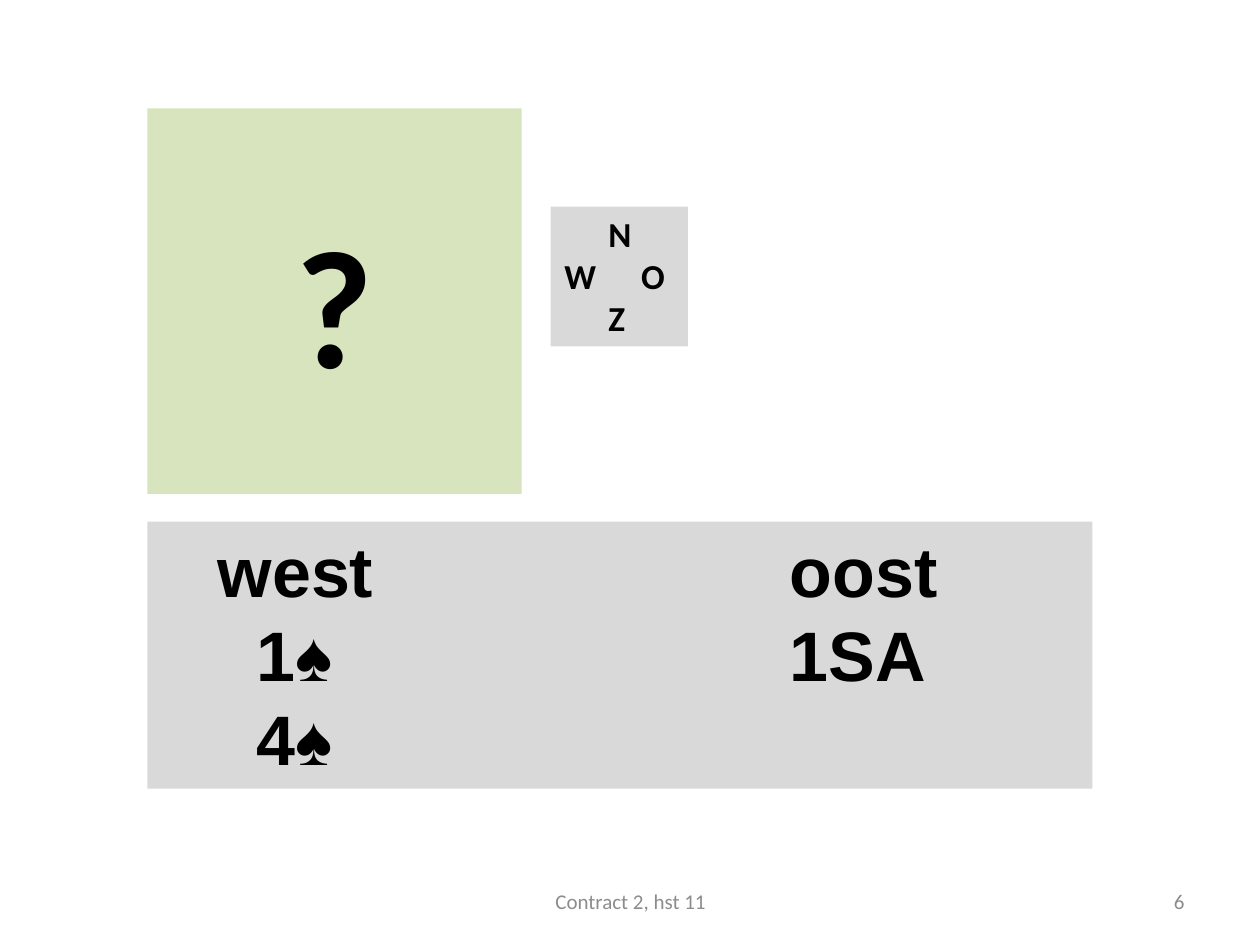
from lxml import etree
from pptx import Presentation
from pptx.dml.color import RGBColor
from pptx.enum.shapes import MSO_SHAPE
from pptx.enum.text import MSO_ANCHOR, PP_ALIGN
from pptx.oxml.ns import qn
from pptx.util import Inches, Pt

RECT = MSO_SHAPE.RECTANGLE
TOP, MIDDLE = MSO_ANCHOR.TOP, MSO_ANCHOR.MIDDLE
LEFT, CENTER, RIGHT = PP_ALIGN.LEFT, PP_ALIGN.CENTER, PP_ALIGN.RIGHT
GREEN, GREY, BLACK, MUTED = "D7E4BD", "D9D9D9", "000000", "8C8C8C"
EDGE = 1.17
FOOT = 6.95


def color(code):
    return RGBColor.from_string(code)


def add_panel(slide, box, fill):
    panel = slide.shapes.add_shape(RECT, *map(Inches, box))
    panel.shadow.inherit = False
    panel.fill.solid()
    panel.fill.fore_color.rgb = color(fill)
    panel.line.fill.background()
    frame = panel.text_frame
    frame.word_wrap = True
    frame.vertical_anchor = TOP
    return frame


def add_run(para, text, size, font="Calibri", ink=BLACK, bold=True):
    run = para.add_run()
    run.text = text
    run.font.size = Pt(size)
    run.font.name = font
    run.font.bold = bold
    run.font.color.rgb = color(ink)


def set_tabs(para, stops):
    tabs = etree.SubElement(para._p.get_or_add_pPr(), qn("a:tabLst"))
    for stop in stops:
        etree.SubElement(tabs, qn("a:tab"), pos=str(Inches(stop)), algn="l")


def add_rows(frame, rows, size, font):
    """Fill a frame with rows of (tab stop, word) pairs."""
    for i, row in enumerate(rows):
        para = frame.add_paragraph() if i else frame.paragraphs[0]
        para.alignment = LEFT
        set_tabs(para, [stop for stop, word in row])
        for stop, word in row:
            add_run(para, "\t" + word, size, font)


def add_note(slide, left, width, text, align):
    box = slide.shapes.add_textbox(*map(Inches, (left, FOOT, width, 0.4)))
    frame = box.text_frame
    frame.word_wrap = True
    frame.vertical_anchor = MIDDLE
    para = frame.paragraphs[0]
    para.alignment = align
    add_run(para, text, 12, ink=MUTED, bold=False)


def main():
    deck = Presentation()
    deck.slide_width, deck.slide_height = Inches(10), Inches(7.5)
    slide = deck.slides.add_slide(deck.slide_layouts[6])

    hand = add_panel(slide, (EDGE, 0.86, 2.97, 3.06), GREEN)
    hand.margin_top = Inches(0.73)
    hand.paragraphs[0].alignment = CENTER
    add_run(hand.paragraphs[0], "?", 96)

    compass = add_panel(slide, (4.37, 1.64, 1.09, 1.11), GREY)
    mid = 0.36
    seats = [[(mid, "N")], [(0.01, "W"), (0.62, "O")], [(mid, "Z")]]
    add_rows(compass, seats, 20, "Calibri")

    bids = add_panel(slide, (EDGE, 4.14, 7.5, 2.12), GREY)
    west, call, east = 0.46, 0.77, 5
    calls = [
        [(west, "west"), (east, "oost")],
        [(call, "1♠"), (east, "1SA")],
        [(call, "4♠")],
    ]
    add_rows(bids, calls, 40, "Arial")

    add_note(slide, 7.17, 2.33, "6", RIGHT)
    add_note(slide, 3.42, 3.17, "Contract 2, hst 11", CENTER)
    deck.save("out.pptx")


if __name__ == "__main__":
    main()
